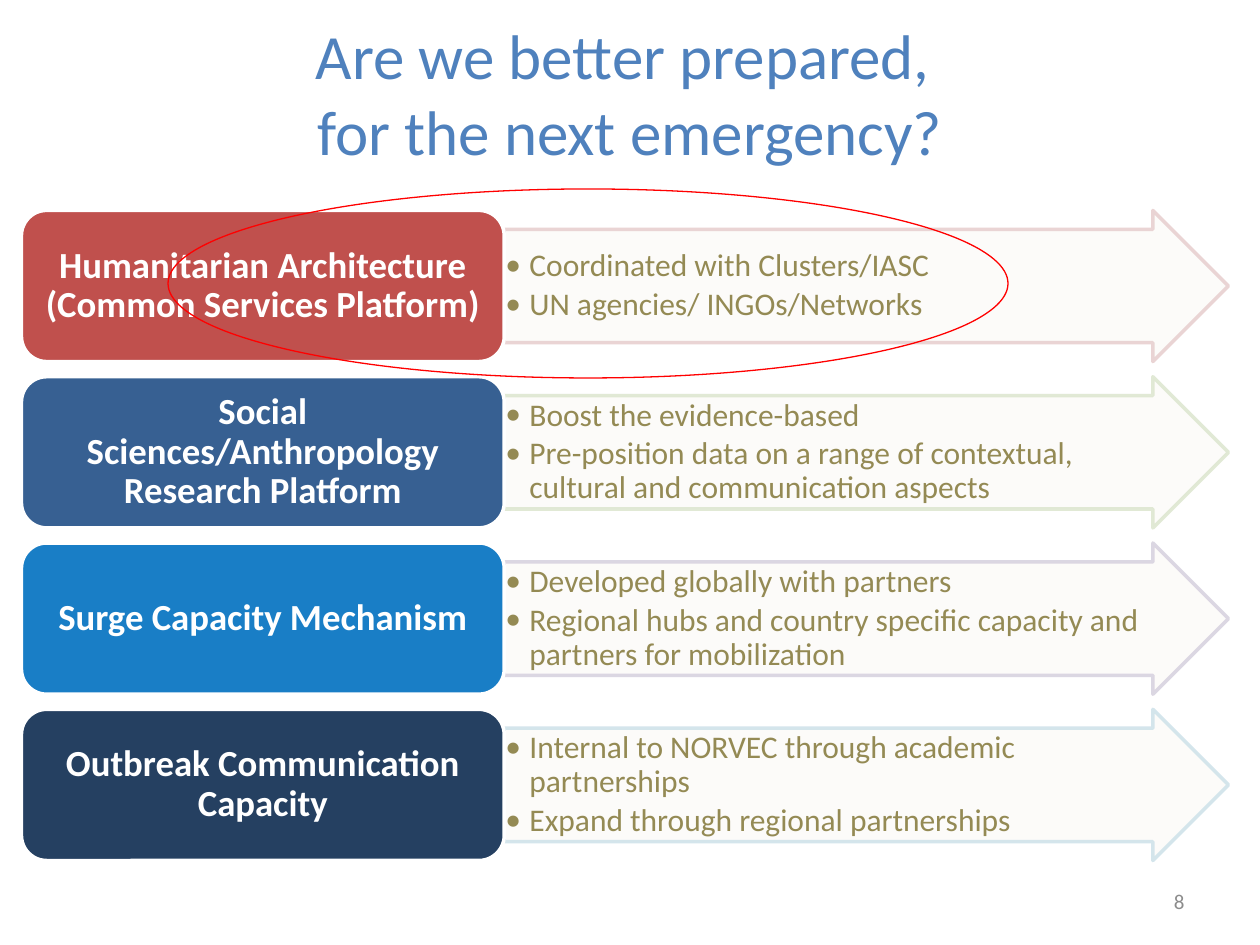
from dataclasses import dataclass

import lxml.etree
import pptx
import pptx.dml.color
import pptx.enum.shapes
import pptx.enum.text
import pptx.oxml.ns
import pptx.util

Inches = pptx.util.Inches
Pt = pptx.util.Pt
qn = pptx.oxml.ns.qn
Shapes = pptx.enum.shapes.MSO_SHAPE
Align = pptx.enum.text.PP_ALIGN


@dataclass(frozen=True)
class Theme:
    """Colours and type sizes of the slide."""
    font: str = "Calibri"
    title: str = "4F81BD"
    detail: str = "948A54"
    white: str = "FFFFFF"
    arrow: str = "FCFBF9"
    number: str = "8C8C8C"
    highlight: str = "FF0000"
    title_size: int = 36
    label_size: int = 21
    detail_size: int = 18
    number_size: int = 12


THEME = Theme()
WIDTH, HEIGHT = 10, 7.5
TITLE = "Are we better prepared, \vfor the next emergency?"

# label, label colour, label opacity, arrow line colour, details
ROWS = [
    ("Humanitarian Architecture (Common Services Platform)", "C0504D", 100, "E8D0D0",
     ["Coordinated with Clusters/IASC", "UN agencies/ INGOs/Networks"]),
    ("Social Sciences/Anthropology Research Platform", "376092", 100, "DEE7D1",
     ["Boost the evidence-based",
      "Pre-position data on a range of contextual, cultural and communication aspects"]),
    ("Surge Capacity Mechanism", "0070C0", 90, "D8D3E0",
     ["Developed globally with partners",
      "Regional hubs and country specific capacity and partners for mobilization"]),
    ("Outbreak Communication Capacity", "254061", 100, "D0E3EA",
     ["Internal to NORVEC through academic partnerships",
      "Expand through regional partnerships"]),
]


def color(value):
    """Turn a hex string into a colour."""
    return pptx.dml.color.RGBColor.from_string(value)


def set_opacity(fill, percent):
    """Make a solid fill partly transparent."""
    if percent < 100:
        srgb = fill._xPr.find(".//" + qn("a:srgbClr"))
        lxml.etree.SubElement(srgb, qn("a:alpha"), val=str(percent * 1000))


def add_shape(slide, kind, box, fill, line, line_width, fill_opacity=100, line_opacity=100):
    """Add a flat preset shape in a box given in inches."""
    shape = slide.shapes.add_shape(kind, *map(Inches, box))
    shape.shadow.inherit = False
    if fill is None:
        shape.fill.background()
    else:
        shape.fill.solid()
        shape.fill.fore_color.rgb = color(fill)
        set_opacity(shape.fill, fill_opacity)
    shape.line.color.rgb = color(line)
    shape.line.width = Pt(line_width)
    set_opacity(shape.line.fill, line_opacity)
    return shape


def write_text(shape, lines, size, tint, align, margins=(0.1, 0.05), bold=False, spacing=1.0):
    """Fill a shape with vertically centred paragraphs and return them."""
    frame = shape.text_frame
    frame.word_wrap = True
    frame.vertical_anchor = pptx.enum.text.MSO_ANCHOR.MIDDLE
    frame.margin_left = frame.margin_right = Inches(margins[0])
    frame.margin_top = frame.margin_bottom = Inches(margins[1])
    frame.text = "\n".join(lines)
    for paragraph in frame.paragraphs:
        paragraph.alignment = align
        paragraph.line_spacing = spacing
        paragraph.font.name = THEME.font
        paragraph.font.size = Pt(size)
        paragraph.font.bold = bold
        paragraph.font.color.rgb = color(tint)
    return frame.paragraphs


def add_bullet(paragraph, indent):
    """Give a paragraph a hanging round bullet."""
    properties = paragraph._p.get_or_add_pPr()
    properties.set("marL", str(Inches(indent)))
    properties.set("indent", str(-Inches(indent)))
    run_defaults = properties.find(qn("a:defRPr"))
    run_defaults.addprevious(lxml.etree.Element(qn("a:buFont"), typeface=THEME.font))
    run_defaults.addprevious(lxml.etree.Element(qn("a:buChar"), char="•"))


def add_text(slide, box, text, size, tint, align):
    """Add a text box holding one paragraph."""
    shape = slide.shapes.add_textbox(*map(Inches, box))
    write_text(shape, [text], size, tint, align)


def add_row(slide, box, label, fill, opacity, outline, details):
    """Place a label and its arrow of details side by side."""
    left, top, width, height = box
    label_width = width * 0.4
    arrow_box = (left + label_width, top, width - label_width, height)
    arrow = add_shape(slide, Shapes.RIGHT_ARROW, arrow_box, THEME.arrow, outline, 2, 90, 90)
    arrow.adjustments[0] = 0.75
    arrow.adjustments[1] = 0.5
    for paragraph in write_text(arrow, details, THEME.detail_size, THEME.detail,
                                Align.LEFT, (0.01, 0.01), spacing=0.9):
        paragraph.space_after = Pt(THEME.detail_size * 0.15)
        add_bullet(paragraph, 0.19)
    label_shape = add_shape(slide, Shapes.ROUNDED_RECTANGLE, (left, top, label_width, height),
                            fill, THEME.white, 2, opacity)
    write_text(label_shape, [label], THEME.label_size, THEME.white, Align.CENTER,
               (0.09, 0.04), bold=True, spacing=0.9)


def add_diagram(slide, box):
    """Stack the rows with gaps of a tenth of a row."""
    left, top, width, height = box
    row_height = height / (len(ROWS) + 0.1 * (len(ROWS) - 1))
    for index, row in enumerate(ROWS):
        add_row(slide, (left, top + index * row_height * 1.1, width, row_height), *row)


def main():
    """Build the slide and save it."""
    presentation = pptx.Presentation()
    presentation.slide_width = Inches(WIDTH)
    presentation.slide_height = Inches(HEIGHT)
    slide = presentation.slides.add_slide(presentation.slide_layouts[6])
    add_text(slide, (0, 0.02, WIDTH, 1.42), TITLE, THEME.title_size, THEME.title, Align.CENTER)
    add_diagram(slide, (0.17, 1.67, 9.58, 5.16))
    add_text(slide, (7.17, 6.95, 2.33, 0.4), "8", THEME.number_size, THEME.number, Align.RIGHT)
    add_shape(slide, Shapes.OVAL, (WIDTH * 2 / 15, HEIGHT / 5, WIDTH * 2 / 3, HEIGHT / 5),
              None, THEME.highlight, 0.75)
    presentation.save("out.pptx")


if __name__ == "__main__":
    main()
